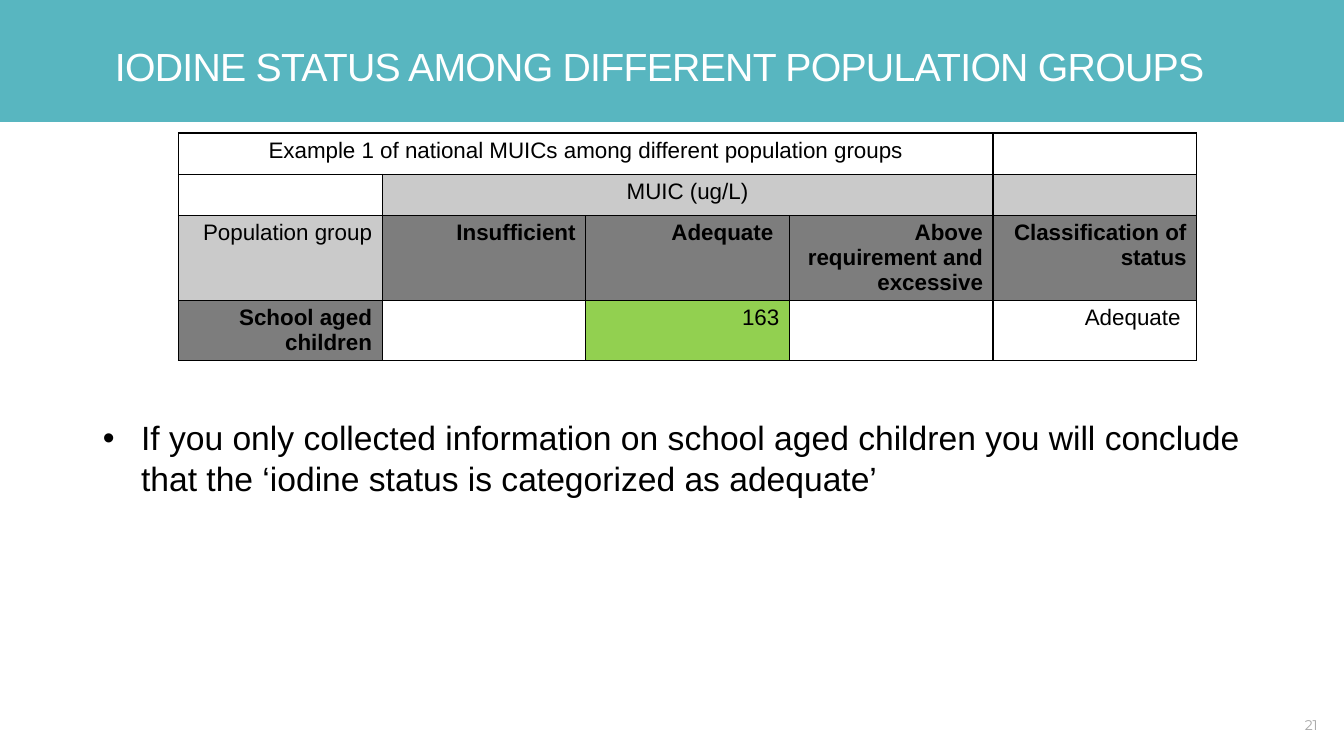
from lxml.etree import SubElement
from pptx import Presentation
from pptx.dml.color import RGBColor
from pptx.enum.shapes import MSO_SHAPE
from pptx.enum.text import MSO_ANCHOR, PP_ALIGN
from pptx.oxml.ns import qn
from pptx.util import Inches, Pt

COLORS = {
    "band": "58B6C0",
    "white": "FFFFFF",
    "black": "000000",
    "light": "CACACA",
    "dark": "7D7D7D",
    "green": "92D050",
    "number": "A7A7A7",
}
COLUMN_WIDTH = 2.02
ROW_HEIGHTS = [0.41, 0.41, 0.84, 0.59]
MERGES = [(0, 0, 3), (1, 1, 3)]
CENTER, RIGHT = PP_ALIGN.CENTER, PP_ALIGN.RIGHT
TABLE_ROWS = [
    [("Example 1 of national MUICs among different population groups", None, False, CENTER)]
    + [("", None, False, CENTER)] * 4,
    [("", None, False, CENTER), ("MUIC (ug/L)", "light", False, CENTER)]
    + [("", "light", False, CENTER)] * 3,
    [("Population group", "light", False, RIGHT)]
    + [(heading, "dark", True, RIGHT) for heading in (
        "Insufficient", "Adequate", "Above requirement and excessive",
        "Classification of status")],
    [("School aged children", "dark", True, RIGHT), ("", None, False, RIGHT),
     ("163", "green", False, RIGHT), ("", None, False, RIGHT),
     ("Adequate", None, False, RIGHT)],
]


def color(name):
    return RGBColor.from_string(COLORS[name])


def style_font(paragraph, size, color_name, name="Arial", bold=False):
    paragraph.font.name = name
    paragraph.font.size = Pt(size)
    paragraph.font.bold = bold
    paragraph.font.color.rgb = color(color_name)


def clear_margins(frame):
    frame.margin_left = frame.margin_right = frame.margin_top = frame.margin_bottom = 0


def add_header(slide, left, top, width, height):
    band = slide.shapes.add_shape(
        MSO_SHAPE.RECTANGLE, Inches(left), Inches(top), Inches(width), Inches(height))
    band.shadow.inherit = False
    band.fill.solid()
    band.fill.fore_color.rgb = color("band")
    band.line.fill.background()
    slide.shapes._spTree.insert(2, band._element)

    title = slide.shapes.title
    title.left, title.top = Inches(left + 1.14), Inches(top + 0.34)
    title.width, title.height = Inches(11.02), Inches(0.55)
    frame = title.text_frame
    clear_margins(frame)
    frame.word_wrap = True
    frame.vertical_anchor = MSO_ANCHOR.BOTTOM
    paragraph = frame.paragraphs[0]
    run = paragraph.add_run()
    run.text = "IODINE STATUS AMONG DIFFERENT POPULATION GROUPS"
    run._r.get_or_add_rPr().set("spc", "-50")
    paragraph.alignment = PP_ALIGN.LEFT
    paragraph.line_spacing = Pt(25)
    style_font(paragraph, 28, "white")


def add_borders(cell):
    properties = cell._tc.get_or_add_tcPr()
    for position, side in enumerate(("a:lnL", "a:lnR", "a:lnT", "a:lnB")):
        line = SubElement(properties, qn(side), w=str(Pt(1)))
        fill = SubElement(line, qn("a:solidFill"))
        SubElement(fill, qn("a:srgbClr"), val=COLORS["black"])
        properties.insert(position, line)


def fill_cell(cell, text, fill_name, bold, alignment):
    if fill_name:
        cell.fill.solid()
        cell.fill.fore_color.rgb = color(fill_name)
    else:
        cell.fill.background()
    add_borders(cell)
    if text == "Adequate":
        cell.margin_right = Inches(0.16)
    paragraph = cell.text_frame.paragraphs[0]
    paragraph.text = text
    paragraph.alignment = alignment
    style_font(paragraph, 16, "black", bold=bold)


def add_status_table(slide, left, top):
    columns = len(TABLE_ROWS[0])
    table = slide.shapes.add_table(
        len(TABLE_ROWS), columns, Inches(left), Inches(top),
        Inches(COLUMN_WIDTH * columns), Inches(sum(ROW_HEIGHTS))).table
    table.first_row = table.horz_banding = False
    for column in table.columns:
        column.width = Inches(COLUMN_WIDTH)
    for row_index, (height, contents) in enumerate(zip(ROW_HEIGHTS, TABLE_ROWS)):
        table.rows[row_index].height = Inches(height)
        for column_index, content in enumerate(contents):
            fill_cell(table.cell(row_index, column_index), *content)
    for row_index, first, last in MERGES:
        table.cell(row_index, first).merge(table.cell(row_index, last))


def add_conclusion(slide, left, top, width, height):
    box = slide.shapes.add_textbox(Inches(left), Inches(top), Inches(width), Inches(height))
    frame = box.text_frame
    clear_margins(frame)
    frame.word_wrap = True
    paragraph = frame.paragraphs[0]
    paragraph.text = (
        "If you only collected information on school aged children you will conclude "
        "that the ‘iodine status is categorized as adequate’")
    properties = paragraph._p.get_or_add_pPr()
    properties.set("marL", str(Inches(0.38)))
    properties.set("indent", str(Inches(-0.38)))
    SubElement(properties, qn("a:buFont"), typeface="Arial")
    SubElement(properties, qn("a:buChar"), char="•")
    style_font(paragraph, 24, "black")


def add_slide_number(slide, left, top, width, height):
    box = slide.shapes.add_textbox(Inches(left), Inches(top), Inches(width), Inches(height))
    clear_margins(box.text_frame)
    box.text_frame.word_wrap = False
    paragraph = box.text_frame.paragraphs[0]
    paragraph.text = "21"
    paragraph.alignment = CENTER
    style_font(paragraph, 10, "number", "Montserrat")


def main():
    presentation = Presentation()
    presentation.slide_width = Inches(13.33)
    presentation.slide_height = Inches(7.5)
    slide = presentation.slides.add_slide(presentation.slide_layouts[5])
    add_header(slide, 0, 0, 13.33, 1.21)
    add_status_table(slide, 1.77, 1.32)
    add_conclusion(slide, 1.02, 4.14, 11.6, 3)
    add_slide_number(slide, 12.91, 7.11, 0.19, 0.17)
    presentation.save("out.pptx")


if __name__ == "__main__":
    main()
